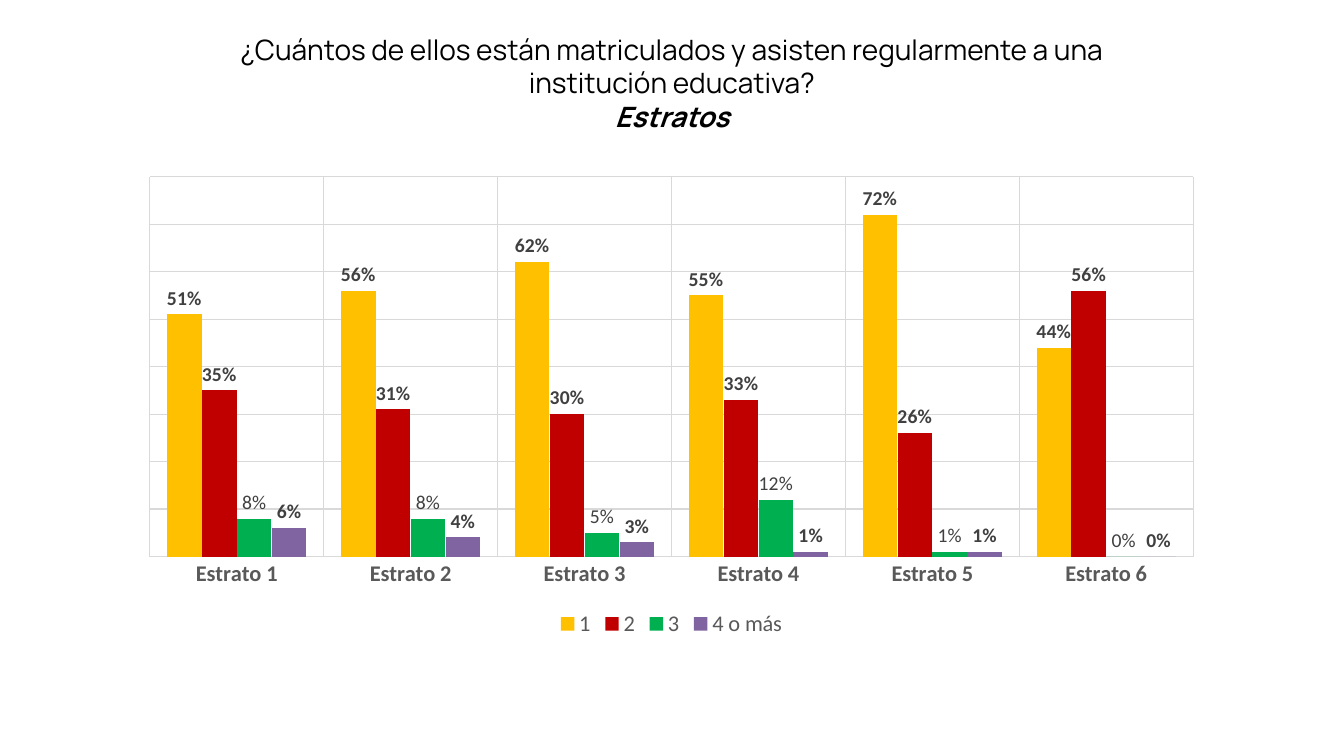
"""Build a slide with a clustered column chart of school enrolment by stratum."""
from lxml import etree
from pptx import Presentation
from pptx.chart.data import CategoryChartData
from pptx.dml.color import RGBColor
from pptx.enum.chart import XL_CHART_TYPE, XL_LABEL_POSITION, XL_LEGEND_POSITION, XL_TICK_MARK
from pptx.enum.text import MSO_ANCHOR, MSO_AUTO_SIZE, PP_ALIGN
from pptx.oxml.ns import qn
from pptx.util import Inches, Pt

COLORS = {
    "title": "000000",
    "axis": "595959",
    "label": "404040",
    "grid": "D9D9D9",
    "1": "FFC000",
    "2": "C00000",
    "3": "00B050",
    "4 o más": "8064A2",
}
ENROLMENT = {
    "1": (0.51, 0.56, 0.62, 0.55, 0.72, 0.44),
    "2": (0.35, 0.31, 0.30, 0.33, 0.26, 0.56),
    "3": (0.08, 0.08, 0.05, 0.12, 0.01, 0),
    "4 o más": (0.06, 0.04, 0.03, 0.01, 0.01, 0),
}
PERCENT = "###0%"


def style_font(font, name, size, color, bold=False):
    font.name = name
    font.size = Pt(size)
    font.bold = bold
    font.color.rgb = RGBColor.from_string(COLORS[color])


def style_line(line):
    line.color.rgb = RGBColor.from_string(COLORS["grid"])
    line.width = Pt(0.75)


presentation = Presentation()
presentation.slide_width = Inches(13.33)
presentation.slide_height = Inches(7.5)
slide = presentation.slides.add_slide(presentation.slide_layouts[5])

title = slide.shapes.title
title.left, title.top = Inches(2.12), Inches(0.27)
title.width, title.height = Inches(9.09), Inches(0.92)
text_frame = title.text_frame
text_frame.text = (
    "¿Cuántos de ellos están matriculados y asisten regularmente a una institución educativa?\n"
    "Estratos"
)
text_frame.word_wrap = True
text_frame.auto_size = MSO_AUTO_SIZE.NONE
text_frame.vertical_anchor = MSO_ANCHOR.TOP
for paragraph, emphasis in zip(text_frame.paragraphs, (False, True)):
    paragraph.alignment = PP_ALIGN.CENTER
    font = paragraph.runs[0].font
    style_font(font, "Manrope", 20, "title", emphasis)
    font.italic = emphasis

chart_data = CategoryChartData(number_format=PERCENT)
chart_data.categories = [f"Estrato {number}" for number in range(1, 7)]
for name, values in ENROLMENT.items():
    chart_data.add_series(name, values)
chart = slide.shapes.add_chart(
    XL_CHART_TYPE.COLUMN_CLUSTERED,
    Inches(1.27), Inches(1.66), Inches(10.78), Inches(4.71), chart_data,
).chart
chart.has_title = False
style_font(chart.font, "Calibri", 10, "title")

chart.has_legend = True
chart.legend.position = XL_LEGEND_POSITION.BOTTOM
chart.legend.include_in_layout = False
style_font(chart.legend.font, "Calibri", 16, "axis")

category_axis = chart.category_axis
category_axis.major_tick_mark = XL_TICK_MARK.NONE
style_font(category_axis.tick_labels.font, "Calibri", 16, "axis", True)
style_line(category_axis.format.line)

value_axis = chart.value_axis
value_axis.visible = False
value_axis.minimum_scale = 0
value_axis.maximum_scale = 0.8
value_axis.major_unit = 0.1
value_axis.tick_labels.number_format = PERCENT
value_axis.tick_labels.number_format_is_linked = False
for axis in (category_axis, value_axis):
    axis.has_major_gridlines = True
    style_line(axis.major_gridlines.format.line)

plot = chart.plots[0]
plot.gap_width = 100
plot.overlap = -1
plot.vary_by_categories = False
for series in plot.series:
    series.format.fill.solid()
    series.format.fill.fore_color.rgb = RGBColor.from_string(COLORS[series.name])
    series.invert_if_negative = False
    labels = series.data_labels
    labels.show_value = True
    labels.number_format = PERCENT
    labels.number_format_is_linked = False
    labels.position = XL_LABEL_POSITION.OUTSIDE_END
    style_font(labels.font, "Calibri", 14, "label", series.name != "3")

plot_area = chart.element.find(f".//{qn('c:plotArea')}")
layout = plot_area.find(qn("c:layout"))
if layout is None:
    layout = etree.Element(qn("c:layout"))
    plot_area.insert(0, layout)
manual_layout = etree.SubElement(layout, qn("c:manualLayout"))
placement = {
    "layoutTarget": "inner", "xMode": "edge", "yMode": "edge",
    "x": 0.02, "y": 0.02, "w": 0.96, "h": 0.8,
}
for tag, value in placement.items():
    etree.SubElement(manual_layout, qn(f"c:{tag}")).set("val", str(value))

presentation.save("out.pptx")
